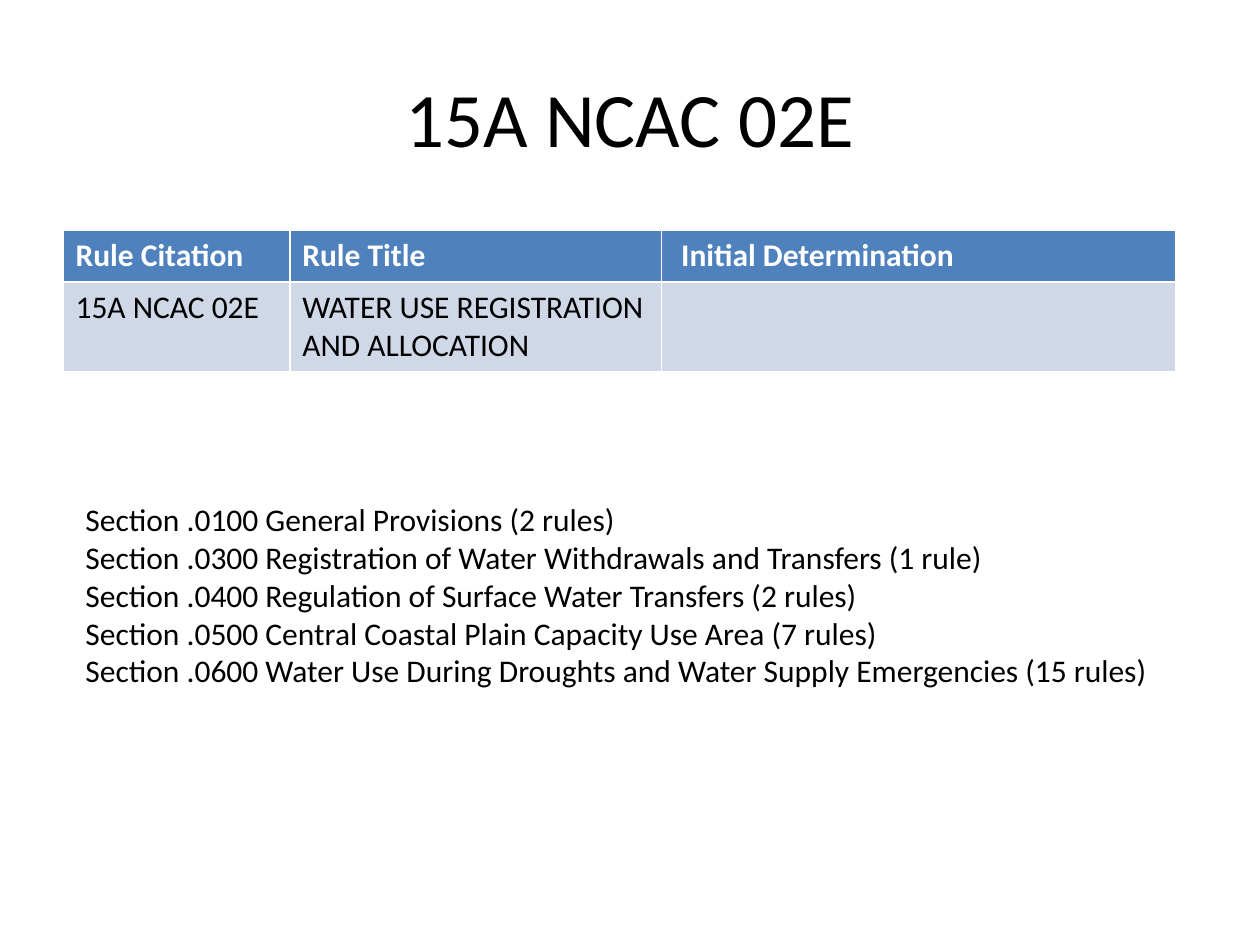
from pptx import Presentation
from pptx.dml.color import RGBColor as RGB
from pptx.enum.text import MSO_ANCHOR as ANCHOR, PP_ALIGN as ALIGN
from pptx.util import Inches, Pt

TITLE = "15A NCAC 02E"
RULES = [
    ["Rule Citation", "Rule Title", " Initial Determination"],
    ["15A NCAC 02E", "WATER USE REGISTRATION AND ALLOCATION", ""],
]
SECTIONS = [
    "Section .0100 General Provisions (2 rules)",
    "Section .0300 Registration of Water Withdrawals and Transfers (1 rule)",
    "Section .0400 Regulation of Surface Water Transfers (2 rules)",
    "Section .0500 Central Coastal Plain Capacity Use Area (7 rules)",
    "Section .0600 Water Use During Droughts and Water Supply Emergencies (15 rules)",
]

WIDTH, HEIGHT = 10, 7.5
COLS = [1.8, 2.95, 4.08]
ROWS = [0.41, 0.71]
BLACK, WHITE = RGB(0, 0, 0), RGB(255, 255, 255)
THEME = {
    "title": {"name": "Calibri", "size": Pt(44), "color": BLACK},
    "body": {"name": "Calibri", "size": Pt(18), "color": BLACK},
    "header": {"name": "Calibri", "size": Pt(18), "color": WHITE, "bold": True},
    "fills": [RGB(0x4F, 0x81, 0xBD), RGB(0xD0, 0xD8, 0xE8)],
}


def write(tf, lines, style, align=ALIGN.LEFT):
    for i, line in enumerate(lines):
        p = tf.add_paragraph() if i else tf.paragraphs[0]
        p.alignment = align
        for target in (p, p.add_run()) if line else (p,):
            for key, value in THEME[style].items():
                if key == "color":
                    target.font.color.rgb = value
                else:
                    setattr(target.font, key, value)
        if line:
            p.runs[0].text = line


def add_text(s, box, lines, style, align=ALIGN.LEFT, anchor=ANCHOR.TOP):
    tf = s.shapes.add_textbox(*map(Inches, box)).text_frame
    tf.word_wrap = True
    tf.vertical_anchor = anchor
    write(tf, lines, style, align)


def add_rules(s, left, top):
    box = map(Inches, (left, top, sum(COLS), sum(ROWS)))
    table = s.shapes.add_table(len(ROWS), len(COLS), *box).table
    for col, width in zip(table.columns, COLS):
        col.width = Inches(width)
    for r, (row, height) in enumerate(zip(table.rows, ROWS)):
        row.height = Inches(height)
        for cell, text in zip(row.cells, RULES[r]):
            cell.fill.solid()
            cell.fill.fore_color.rgb = THEME["fills"][r]
            write(cell.text_frame, [text], "body" if r else "header")


def main():
    prs = Presentation()
    prs.slide_width, prs.slide_height = Inches(WIDTH), Inches(HEIGHT)
    s = prs.slides.add_slide(prs.slide_layouts[6])
    margin = WIDTH * 0.05
    add_text(s, (margin, HEIGHT * 0.04, WIDTH - 2 * margin, HEIGHT / 6),
             [TITLE], "title", ALIGN.CENTER, ANCHOR.MIDDLE)
    add_rules(s, margin, 1.83)
    add_text(s, (0.58, 3.92, 8.75, 1.92), SECTIONS, "body")
    prs.save("out.pptx")


if __name__ == "__main__":
    main()
